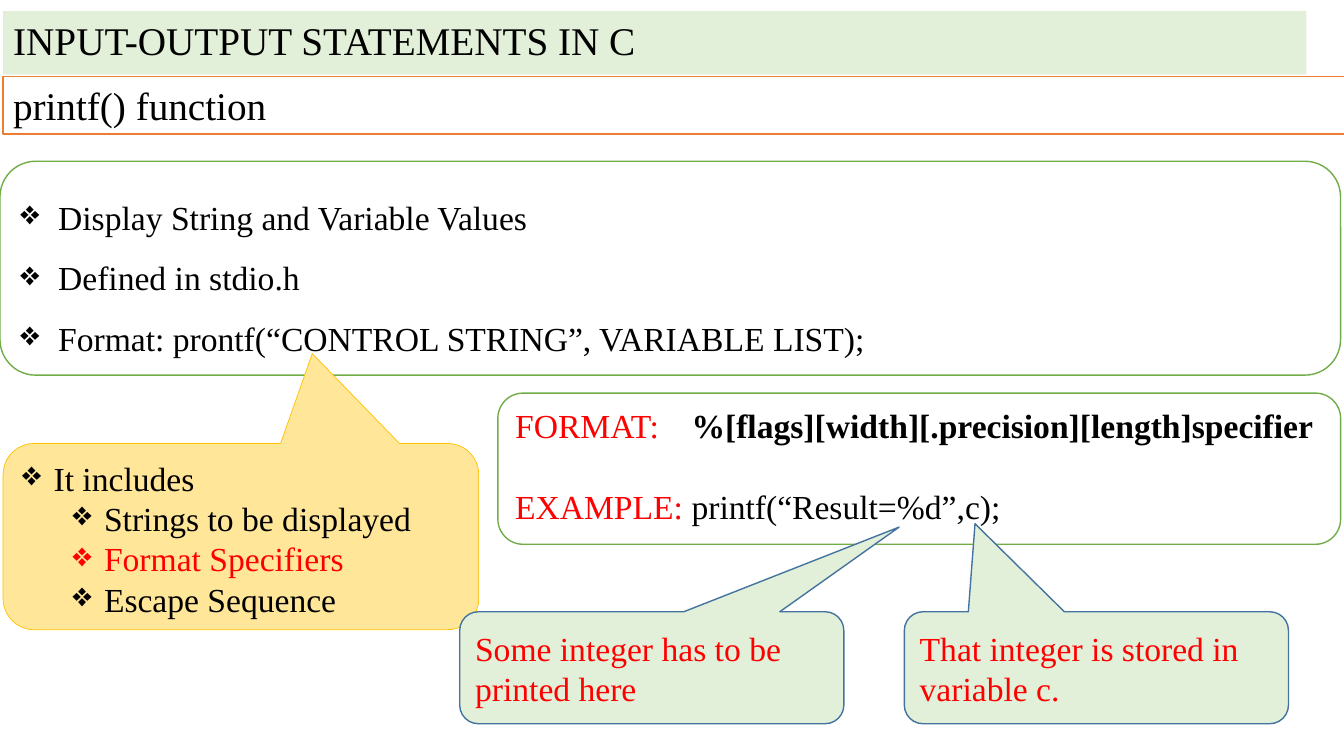
from collections import namedtuple
from lxml import etree
from pptx import Presentation
from pptx import util as u
from pptx.dml.color import RGBColor
from pptx.enum import shapes, text
from pptx.oxml.ns import qn

Theme = namedtuple("Theme", "font head body black red mint white orange green sand gold blue")
T = Theme("Times New Roman", 28, 24, "000000", "FF0000", "E2F0D9", "FFFFFF",
          "ED7D31", "70AD47", "FFE699", "FFC000", "43739E")
ROUND = shapes.MSO_SHAPE.FLOWCHART_ALTERNATE_PROCESS
RECT = shapes.MSO_SHAPE.RECTANGLE
CALLOUT = shapes.MSO_SHAPE.ROUNDED_RECTANGULAR_CALLOUT
TOP, MIDDLE = text.MSO_ANCHOR.TOP, text.MSO_ANCHOR.MIDDLE


def style(sp, fill=None, line=None, width=1, anchor=TOP):
    if fill:
        sp.fill.solid()
        sp.fill.fore_color.rgb = RGBColor.from_string(fill)
    else:
        sp.fill.background()
    if line:
        sp.line.color.rgb = RGBColor.from_string(line)
        sp.line.width = u.Pt(width)
    else:
        sp.line.fill.background()
    frame = {"word_wrap": True, "vertical_anchor": anchor, "auto_size": text.MSO_AUTO_SIZE.NONE}
    for key, value in frame.items():
        setattr(sp.text_frame, key, value)


def write(tf, paragraphs, size=T.body, hang=0, spacing=None, before=0, tab=0):
    for i, (level, runs) in enumerate(paragraphs):
        p = tf.add_paragraph() if i else tf.paragraphs[0]
        layout = {"level": level, "alignment": text.PP_ALIGN.LEFT, "line_spacing": spacing,
                  "space_before": u.Pt(before if i else 0)}
        for key, value in layout.items():
            setattr(p, key, value)
        pPr = p._p.get_or_add_pPr()
        if hang:
            pPr.set("marL", str(u.Pt(hang + 36 * level)))
            pPr.set("indent", str(u.Pt(-hang)))
            etree.SubElement(pPr, qn("a:buChar"), char="❖")
        if tab:
            tabs = etree.SubElement(pPr, qn("a:tabLst"))
            etree.SubElement(tabs, qn("a:tab"), pos=str(u.Pt(tab)), algn="l")
        for words, colour, bold in runs:
            r = p.add_run()
            r.text = words
            for key, value in {"name": T.font, "size": u.Pt(size), "bold": bold}.items():
                setattr(r.font, key, value)
            r.font.color.rgb = RGBColor.from_string(colour)


prs = Presentation()
prs.slide_width, prs.slide_height = u.Pt(960), u.Pt(540)
s = prs.slides.add_slide(prs.slide_layouts[5])

title = s.shapes.title
for key, value in {"left": 2.2, "top": 7.9, "width": 931, "height": 45.4}.items():
    setattr(title, key, u.Pt(value))
geometry = etree.SubElement(title._element.spPr, qn("a:prstGeom"), prst="flowChartAlternateProcess")
etree.SubElement(geometry, qn("a:avLst"))
style(title, T.mint)
write(title.text_frame, [(0, [("INPUT-OUTPUT STATEMENTS IN C", T.black, False)])], T.head)

boxes = [
    (RECT, (2.2, 54.7, 959, 41), (), dict(fill=T.white, line=T.orange),
     [(0, [("printf() function", T.black, False)])], dict(size=T.head)),
    (ROUND, (0, 115.2, 957.6, 152.8), (), dict(line=T.green),
     [(0, [(words, T.black, False)]) for words in (
         "Display String and Variable Values",
         "Defined in stdio.h",
         "Format: prontf(“CONTROL STRING”, VARIABLE LIST);")],
     dict(hang=27, spacing=1.5)),
    (CALLOUT, (2.2, 316.8, 339.8, 133), (0.15, -0.983), dict(fill=T.sand, line=T.gold, width=0.5),
     [(0, [("It includes", T.black, False)]),
      (1, [("Strings to be displayed", T.black, False)]),
      (1, [("Format Specifiers", T.red, False)]),
      (1, [("Escape Sequence", T.black, False)])], dict(hang=22.5)),
    (ROUND, (355.6, 280.8, 602, 108), (), dict(line=T.green),
     [(0, [("FORMAT:\t", T.red, False),
           ("%[flags][width][.precision][length]specifier", T.black, True)]),
      (0, [("EXAMPLE:\t", T.red, False), ("printf(“Result=%d”,c);", T.black, False)])],
     dict(before=29, tab=126)),
]
notes = [
    (328.4, (0.644, -1.256), "Some integer has to be printed here"),
    (646, (-0.316, -1.286), "That integer is stored in variable c."),
]
for left, pointer, words in notes:
    boxes.append((CALLOUT, (left, 437, 274.4, 80), pointer,
                  dict(fill=T.mint, line=T.blue, anchor=MIDDLE),
                  [(0, [(words, T.red, False)])], {}))

for kind, place, pointer, look, paragraphs, setting in boxes:
    sp = s.shapes.add_shape(kind, *map(u.Pt, place))
    sp.shadow.inherit = False
    for i, value in enumerate(pointer):
        sp.adjustments[i] = value
    style(sp, **look)
    write(sp.text_frame, paragraphs, **setting)

prs.save("out.pptx")
